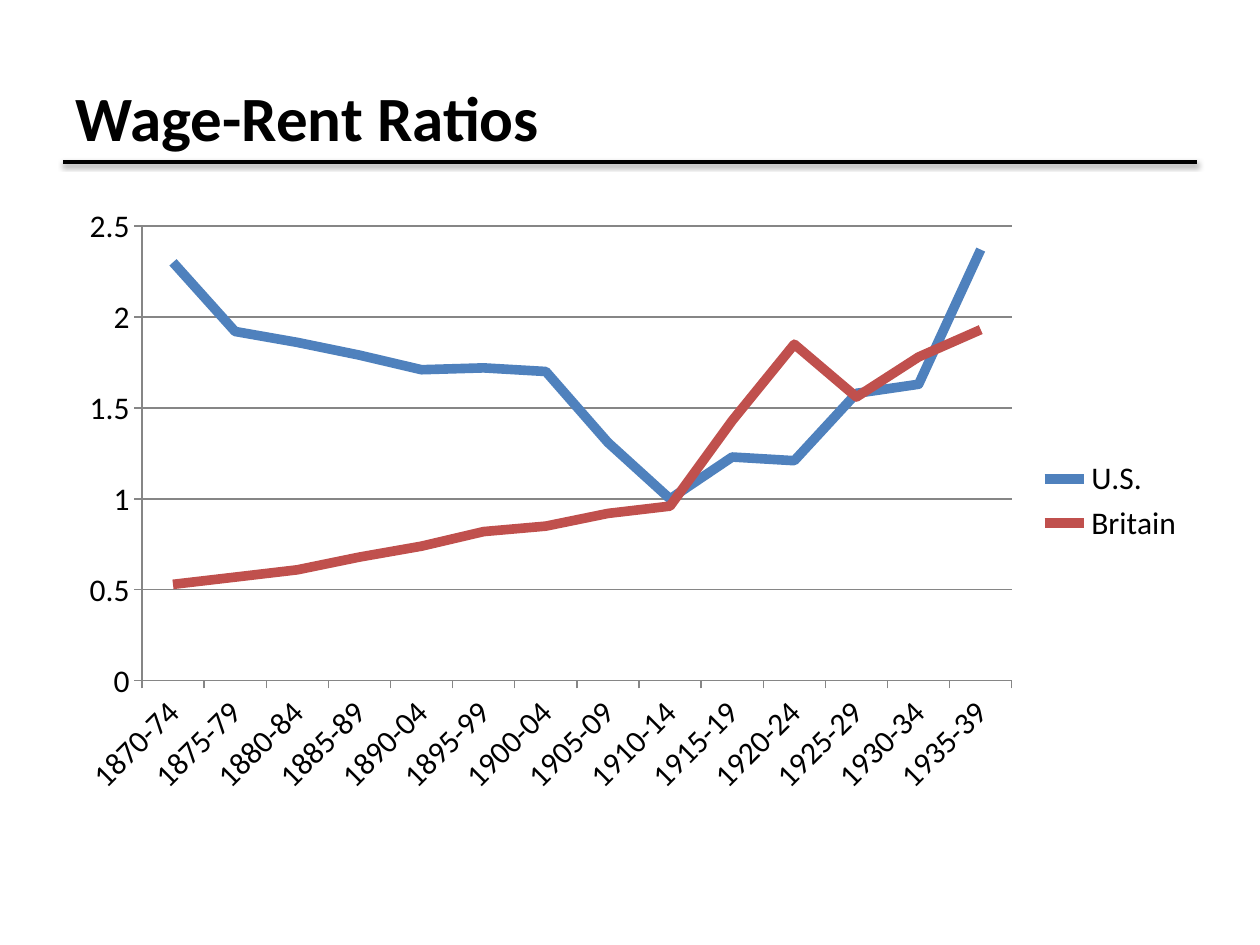
from lxml import etree
from pptx import Presentation
from pptx import util as u
from pptx.chart.data import CategoryChartData
from pptx.dml.color import RGBColor
from pptx.enum import chart as ch, shapes, text
from pptx.oxml import parse_xml
from pptx.oxml.ns import nsdecls, qn

TITLE = "Wage-Rent Ratios"
CATS = ["1870-74", "1875-79", "1880-84", "1885-89", "1890-04", "1895-99", "1900-04",
        "1905-09", "1910-14", "1915-19", "1920-24", "1925-29", "1930-34", "1935-39"]
DATA = {
    "U.S.": [2.3, 1.92, 1.86, 1.79, 1.71, 1.72, 1.7,
             1.31, 1, 1.23, 1.21, 1.58, 1.63, 2.37],
    "Britain": [0.53, 0.57, 0.61, 0.68, 0.74, 0.82, 0.85,
                0.92, 0.96, 1.43, 1.85, 1.56, 1.78, 1.93],
}
HUES = {"ink": "000000", "grid": "868686", "U.S.": "4F81BD", "Britain": "C0504D"}
FONT = "Calibri"
LEFT, WIDE = 63, 1134
TOP, HIGH = 195, 612
PLOT = {"x": 142 - LEFT, "y": 226 - TOP, "w": 870, "h": 455}


def px(n):
    return u.Emu(round(n * 914400 / 126))


def hue(name):
    return RGBColor.from_string(HUES[name])


def style(font, size, bold=False):
    font.name, font.size, font.bold = FONT, u.Pt(size), bold
    font.color.rgb = hue("ink")


def write(shape, words, size, bold=False, align=text.PP_ALIGN.LEFT):
    frame = shape.text_frame
    frame.word_wrap = True
    frame.vertical_anchor = text.MSO_ANCHOR.MIDDLE
    para = frame.paragraphs[0]
    para.alignment = align
    run = para.add_run()
    run.text = words
    style(run.font, size, bold)


def stroke(line, name, width):
    line.color.rgb = hue(name)
    line.width = u.Pt(width)


def add_rule(slide):
    rule = slide.shapes.add_connector(
        shapes.MSO_CONNECTOR.STRAIGHT, px(LEFT), px(162), px(LEFT + WIDE), px(162))
    stroke(rule.line, "ink", 2)
    rule._element.spPr.append(parse_xml(
        f'<a:effectLst {nsdecls("a")}><a:outerShdw blurRad="{u.Pt(3.1)}" '
        f'dist="{u.Pt(1.6)}" dir="5400000" rotWithShape="0">'
        f'<a:srgbClr val="{HUES["ink"]}"><a:alpha val="38000"/></a:srgbClr>'
        '</a:outerShdw></a:effectLst>'))


def set_plot(chart):
    area = chart._chartSpace.chart.plotArea
    for old in area.findall(qn("c:layout")):
        area.remove(old)
    layout = etree.Element(qn("c:layout"))
    manual = etree.SubElement(layout, qn("c:manualLayout"))
    rows = [("layoutTarget", "inner"), ("xMode", "edge"), ("yMode", "edge")]
    rows += [(tag, n / (WIDE if tag in "xw" else HIGH)) for tag, n in PLOT.items()]
    for tag, val in rows:
        etree.SubElement(manual, qn("c:" + tag)).set("val", str(val))
    area.insert(0, layout)


def add_graph(slide):
    data = CategoryChartData()
    data.categories = CATS
    for name, vals in DATA.items():
        data.add_series(name, vals)
    chart = slide.shapes.add_chart(
        ch.XL_CHART_TYPE.LINE, px(LEFT), px(TOP), px(WIDE), px(HIGH), data).chart
    style(chart.font, 18)
    chart.has_title = False
    chart.has_legend = True
    chart.legend.position = ch.XL_LEGEND_POSITION.RIGHT
    chart.legend.include_in_layout = False
    plot = chart.plots[0]
    plot.vary_by_categories = False
    for line in plot.series:
        line.smooth = False
        line.marker.style = ch.XL_MARKER_STYLE.NONE
        stroke(line.format.line, line.name, 5.5)
    cat, val = chart.category_axis, chart.value_axis
    for axis in (cat, val):
        axis.major_tick_mark = ch.XL_TICK_MARK.OUTSIDE
        axis.minor_tick_mark = ch.XL_TICK_MARK.NONE
        stroke(axis.format.line, "grid", 0.75)
    cat.tick_labels.font.size = u.Pt(18)
    cat._element.txPr.bodyPr.set("rot", "-2700000")
    val.minimum_scale, val.maximum_scale, val.major_unit = 0, 2.5, 0.5
    val.tick_labels.number_format = "General"
    val.tick_labels.number_format_is_linked = False
    val.has_major_gridlines = True
    stroke(val.major_gridlines.format.line, "grid", 0.75)
    set_plot(chart)


def main():
    deck = Presentation()
    deck.slide_width, deck.slide_height = px(1260), px(945)
    slide = deck.slides.add_slide(deck.slide_layouts[5])
    title = slide.shapes.title
    title.left, title.top, title.width, title.height = px(LEFT), px(38), px(WIDE), px(157)
    write(title, TITLE, 36, bold=True)
    add_rule(slide)
    add_graph(slide)
    deck.save("out.pptx")


if __name__ == "__main__":
    main()
